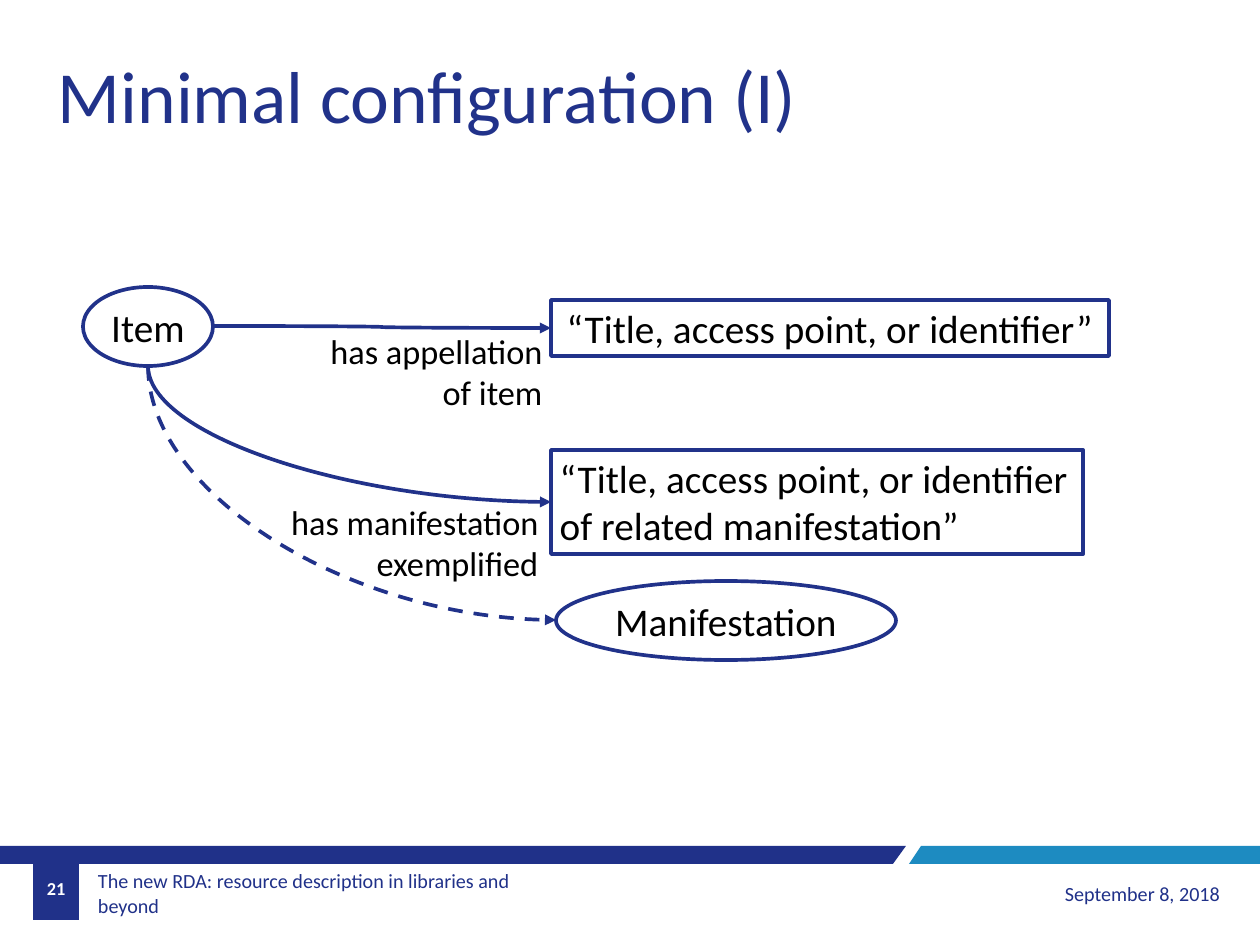
from lxml import etree
from pptx import Presentation
from pptx import util as u
from pptx.dml.color import RGBColor
from pptx.enum import dml, shapes, text
from pptx.oxml.ns import qn

PX = 10367
NAVY, LINE, BLUE, BLACK, WHITE = "203189", "21328A", "1D8BC1", "000000", "FFFFFF"
LEFT, CENTER, RIGHT = text.PP_ALIGN.LEFT, text.PP_ALIGN.CENTER, text.PP_ALIGN.RIGHT
TOP, MIDDLE = text.MSO_ANCHOR.TOP, text.MSO_ANCHOR.MIDDLE


def color(value):
    return RGBColor.from_string(value)


def write(shape, words, size=32, ink=BLACK, align=CENTER, anchor=TOP, bold=False, wrap=False):
    frame = shape.text_frame
    frame.text = words
    frame.word_wrap = wrap
    frame.vertical_anchor = anchor
    frame.auto_size = text.MSO_AUTO_SIZE.NONE if wrap else text.MSO_AUTO_SIZE.SHAPE_TO_FIT_TEXT
    for paragraph in frame.paragraphs:
        paragraph.alignment = align
        for run in paragraph.runs:
            run.font.name = "Calibri"
            run.font.size = u.Pt(size)
            run.font.bold = bold
            run.font.color.rgb = color(ink)


presentation = Presentation()
presentation.slide_width = 1260 * PX
presentation.slide_height = 945 * PX
slide = presentation.slides.add_slide(presentation.slide_layouts[5])

title = slide.shapes.title
title.left, title.top, title.width, title.height = [n * PX for n in (49, 46, 768, 98)]
write(title, "Minimal configuration (I)", size=60, ink=LINE, align=LEFT)

bands = [
    (NAVY, [(906, 846), (0, 846), (0, 864), (893, 864)]),
    (BLUE, [(1260, 846), (921, 846), (909, 864), (1260, 864)]),
    (NAVY, [(33, 846), (79, 846), (79, 920), (33, 920)]),
]
for fill, points in bands:
    builder = slide.shapes.build_freeform(*points[0], scale=PX)
    builder.add_line_segments(points[1:], close=True)
    band = builder.convert_to_shape()
    band.shadow.inherit = False
    band.fill.solid()
    band.fill.fore_color.rgb = color(fill)
    band.line.fill.background()

footers = [
    ("The new RDA: resource description in libraries and beyond", (92, 869, 487, 48), 16.4, NAVY, LEFT, False, 6),
    ("September 8, 2018", (906, 869, 323, 48), 16.4, NAVY, RIGHT, False, 9),
    ("21", (33, 864, 46, 48), 14.9, WHITE, CENTER, True, 0),
]
for words, place, size, ink, align, bold, inset in footers:
    footer = slide.shapes.add_textbox(*[n * PX for n in place])
    write(footer, words, size=size, ink=ink, align=align, anchor=MIDDLE, bold=bold, wrap=True)
    footer.text_frame.margin_left = footer.text_frame.margin_right = inset * PX

OVAL, BOX = shapes.MSO_SHAPE.OVAL, shapes.MSO_SHAPE.RECTANGLE
nodes = [
    (OVAL, "Item", (83, 287, 130, 79), CENTER),
    (OVAL, "Manifestation", (556, 581, 340, 79), CENTER),
    (BOX, "“Title, access point, or identifier”", (551, 300, 558, 56), CENTER),
    (BOX, "“Title, access point, or identifier\nof related manifestation”", (551, 450, 532, 104), LEFT),
]
for kind, words, place, align in nodes:
    node = slide.shapes.add_shape(kind, *[n * PX for n in place])
    node.shadow.inherit = False
    node.fill.solid()
    node.fill.fore_color.rgb = color(WHITE)
    node.line.color.rgb = color(LINE)
    node.line.width = u.Pt(3)
    write(node, words, align=align)

labels = [
    ("has appellation\nof item", (319, 326, 232, 92)),
    ("has manifestation\nexemplified", (279, 497, 268, 92)),
]
for words, place in labels:
    label = slide.shapes.add_textbox(*[n * PX for n in place])
    write(label, words, size=28, align=RIGHT)

arrows = [
    ((212, 326), (551, 328), False, False),
    ((148, 366), (551, 502), True, False),
    ((148, 366), (556, 620), True, True),
]
for start, end, from_below, dashed in arrows:
    arrow = slide.shapes.add_connector(shapes.MSO_CONNECTOR.CURVE, *[n * PX for n in start + end])
    arrow.line.color.rgb = color(LINE)
    arrow.line.width = u.Pt(3)
    if dashed:
        arrow.line.dash_style = dml.MSO_LINE.DASH
    properties = arrow._element.spPr
    if from_below:
        width, height = end[0] - start[0], end[1] - start[1]
        arrow.left = (start[0] + end[0] - height) * PX // 2
        arrow.top = (start[1] + end[1] - width) * PX // 2
        arrow.width, arrow.height = height * PX, width * PX
        frame = properties.find(qn("a:xfrm"))
        frame.set("rot", "16200000")
        frame.set("flipH", "1")
        properties.find(qn("a:prstGeom")).set("prst", "curvedConnector2")
    etree.SubElement(properties.find(qn("a:ln")), qn("a:tailEnd"), type="triangle")
    etree.SubElement(properties, qn("a:effectLst"))

presentation.save("out.pptx")
